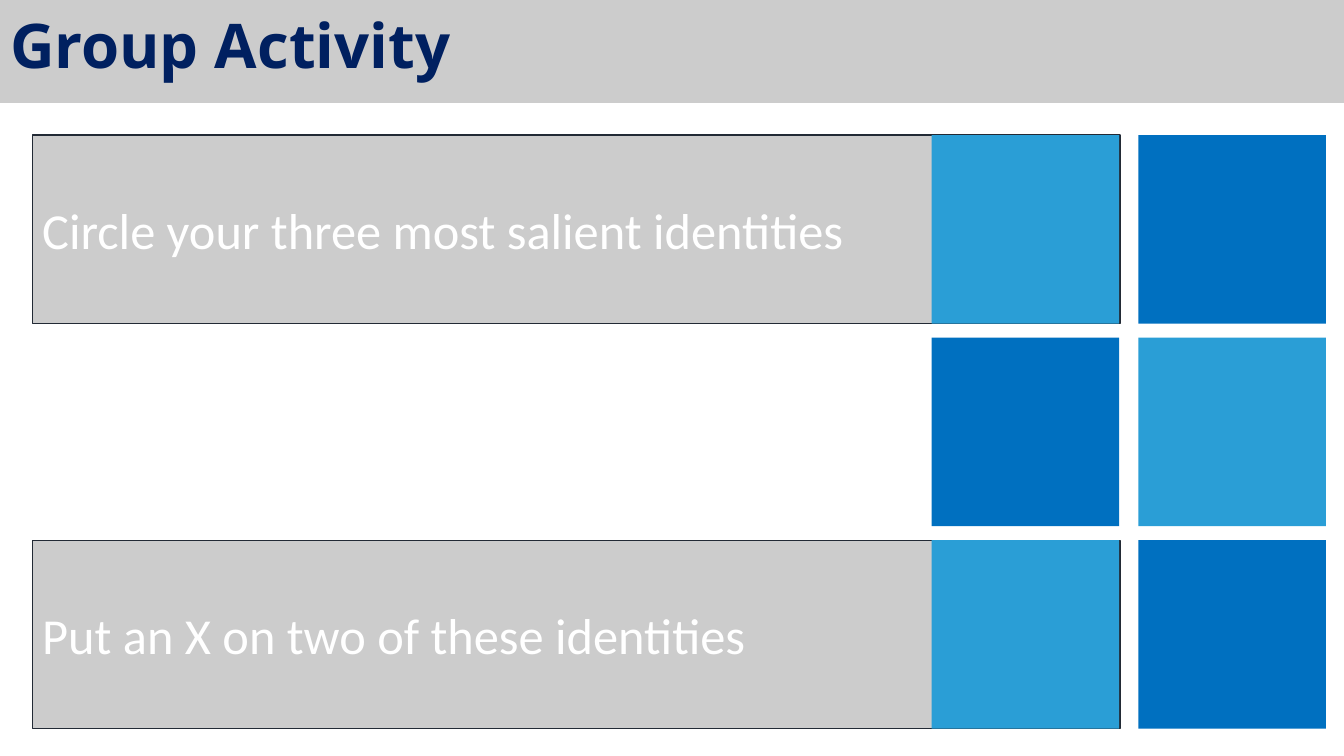
from dataclasses import dataclass

from pptx import Presentation
from pptx.dml.color import RGBColor
from pptx.enum.shapes import MSO_SHAPE
from pptx.enum.text import MSO_ANCHOR, PP_ALIGN
from pptx.shapes.autoshape import Shape
from pptx.slide import Slide
from pptx.util import Inches, Pt

RECTANGLE = MSO_SHAPE.RECTANGLE
MIDDLE = MSO_ANCHOR.MIDDLE
LEFT = PP_ALIGN.LEFT


@dataclass(frozen=True)
class Theme:
    grey: RGBColor = RGBColor.from_string("CCCCCC")
    outline: RGBColor = RGBColor.from_string("222A35")
    light_blue: RGBColor = RGBColor.from_string("2A9ED6")
    dark_blue: RGBColor = RGBColor.from_string("0070C0")
    navy: RGBColor = RGBColor.from_string("002060")
    white: RGBColor = RGBColor.from_string("FFFFFF")
    title_font: str = "Open Sans"
    body_font: str = "Calibri"
    title_size: int = 44
    body_size: int = 36


@dataclass(frozen=True)
class Area:
    left: float
    top: float
    width: float
    height: float


@dataclass(frozen=True)
class Instruction:
    row: int
    text: str


THEME = Theme()
ROW_COUNT = 3
FIRST_ROW_TOP = 1.34
ROW_PITCH = 2.01
ROW_HEIGHT = 1.87
TILE_LEFTS = (9.24, 11.29)
TILE_WIDTH = 1.86
INSTRUCTIONS = (
    Instruction(0, "Circle your three most salient identities"),
    Instruction(2, "Put an X on two of these identities"),
)


def row_area(row: int, left: float, width: float) -> Area:
    return Area(left, FIRST_ROW_TOP + row * ROW_PITCH, width, ROW_HEIGHT)


def add_rectangle(page: Slide, area: Area, fill: RGBColor) -> Shape:
    box = page.shapes.add_shape(
        RECTANGLE,
        Inches(area.left), Inches(area.top), Inches(area.width), Inches(area.height),
    )
    box.shadow.inherit = False
    box.fill.solid()
    box.fill.fore_color.rgb = fill
    box.line.fill.background()
    return box


def write_text(box: Shape, text: str, font: str, size: int, color: RGBColor, bold: bool) -> None:
    frame = box.text_frame
    frame.word_wrap = True
    frame.vertical_anchor = MIDDLE
    frame.text = text
    para = frame.paragraphs[0]
    para.alignment = LEFT
    span = para.runs[0]
    span.font.name = font
    span.font.size = Pt(size)
    span.font.color.rgb = color
    span.font.bold = bold


def add_title(page: Slide, text: str) -> None:
    add_rectangle(page, Area(0, 0, 13.33, 1.02), THEME.grey)
    box = page.shapes.add_textbox(Inches(0.05), Inches(0.16), Inches(11.83), Inches(0.64))
    write_text(box, text, THEME.title_font, THEME.title_size, THEME.navy, True)
    frame = box.text_frame
    frame.margin_left = frame.margin_right = Inches(0.05)
    frame.margin_top = frame.margin_bottom = Inches(0.02)
    frame.paragraphs[0].line_spacing = 0.9


def add_instruction(page: Slide, instruction: Instruction) -> None:
    box = add_rectangle(page, row_area(instruction.row, 0.32, 10.79), THEME.grey)
    box.line.color.rgb = THEME.outline
    box.line.width = Pt(1)
    write_text(box, instruction.text, THEME.body_font, THEME.body_size, THEME.white, False)


def add_tiles(page: Slide) -> None:
    colors = (THEME.light_blue, THEME.dark_blue)
    for row in range(ROW_COUNT):
        for column, left in enumerate(TILE_LEFTS):
            add_rectangle(page, row_area(row, left, TILE_WIDTH), colors[(row + column) % 2])


def main() -> None:
    deck = Presentation()
    deck.slide_width = Inches(13.33)
    deck.slide_height = Inches(7.5)
    page = deck.slides.add_slide(deck.slide_layouts[6])
    add_title(page, "Group Activity")
    for instruction in INSTRUCTIONS:
        add_instruction(page, instruction)
    add_tiles(page)
    deck.save("out.pptx")


if __name__ == "__main__":
    main()
